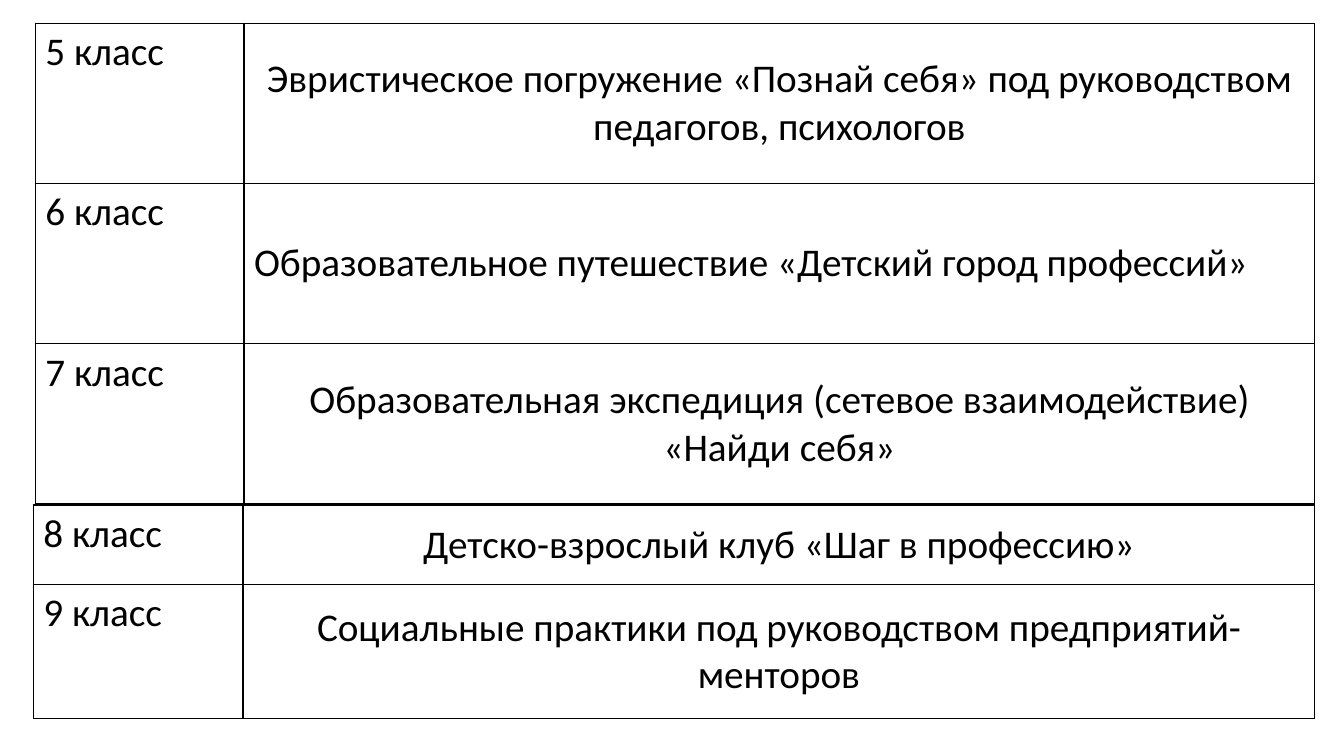
from dataclasses import dataclass

from lxml.etree import SubElement
from pptx import Presentation
from pptx.dml.color import RGBColor
from pptx.enum.text import MSO_ANCHOR as Anchor, PP_ALIGN as Align
from pptx.oxml.ns import qn
from pptx.util import Inches, Pt


@dataclass(frozen=True)
class Theme:
    font: str = "Calibri"
    size: int = 28
    ink: str = "000000"
    paper: str = "FFFFFF"
    border: int = 1


THEME = Theme()

MIDDLE_GRADES = [
    ("5 класс", "Эвристическое погружение «Познай себя» под руководством педагогов, психологов", Align.CENTER),
    ("6 класс", "Образовательное путешествие «Детский город профессий»", Align.LEFT),
    ("7 класс", "Образовательная экспедиция (сетевое взаимодействие) «Найди себя»", Align.CENTER),
]
SENIOR_GRADES = [
    ("8 класс", "Детско-взрослый клуб «Шаг в профессию»", Align.CENTER),
    ("9 класс", "Социальные практики под руководством предприятий-менторов", Align.CENTER),
]


def add_borders(cell):
    properties = cell._tc.get_or_add_tcPr()
    for position, side in enumerate(("lnL", "lnR", "lnT", "lnB")):
        line = SubElement(properties, qn(f"a:{side}"), w=str(Pt(THEME.border)))
        fill = SubElement(line, qn("a:solidFill"))
        SubElement(fill, qn("a:srgbClr"), val=THEME.ink)
        properties.insert(position, line)


def fill_cell(cell, text, align, anchor):
    cell.fill.solid()
    cell.fill.fore_color.rgb = RGBColor.from_string(THEME.paper)
    add_borders(cell)
    cell.vertical_anchor = anchor
    cell.text_frame.text = text
    paragraph = cell.text_frame.paragraphs[0]
    paragraph.alignment = align
    font = paragraph.runs[0].font
    font.name = THEME.font
    font.size = Pt(THEME.size)
    font.color.rgb = RGBColor.from_string(THEME.ink)


def add_grades(slide, left, top, widths, heights, grades):
    table = slide.shapes.add_table(
        len(grades), len(widths), Inches(left), Inches(top),
        Inches(sum(widths)), Inches(sum(heights)),
    ).table
    table.first_row = False
    table.horz_banding = False
    for column, width in zip(table.columns, widths):
        column.width = Inches(width)
    for row, height, (grade, activity, align) in zip(table.rows, heights, grades):
        row.height = Inches(height)
        fill_cell(row.cells[0], grade, Align.LEFT, Anchor.TOP)
        fill_cell(row.cells[1], activity, align, Anchor.MIDDLE)


def main():
    deck = Presentation()
    deck.slide_width, deck.slide_height = Inches(13.33), Inches(7.5)
    slide = deck.slides.add_slide(deck.slide_layouts[6])
    add_grades(slide, 0.35, 0.23, (2.07, 10.62), (1.59,) * 3, MIDDLE_GRADES)
    add_grades(slide, 0.33, 5.01, (2.08, 10.63), (0.79, 1.33), SENIOR_GRADES)
    deck.save("out.pptx")


if __name__ == "__main__":
    main()
